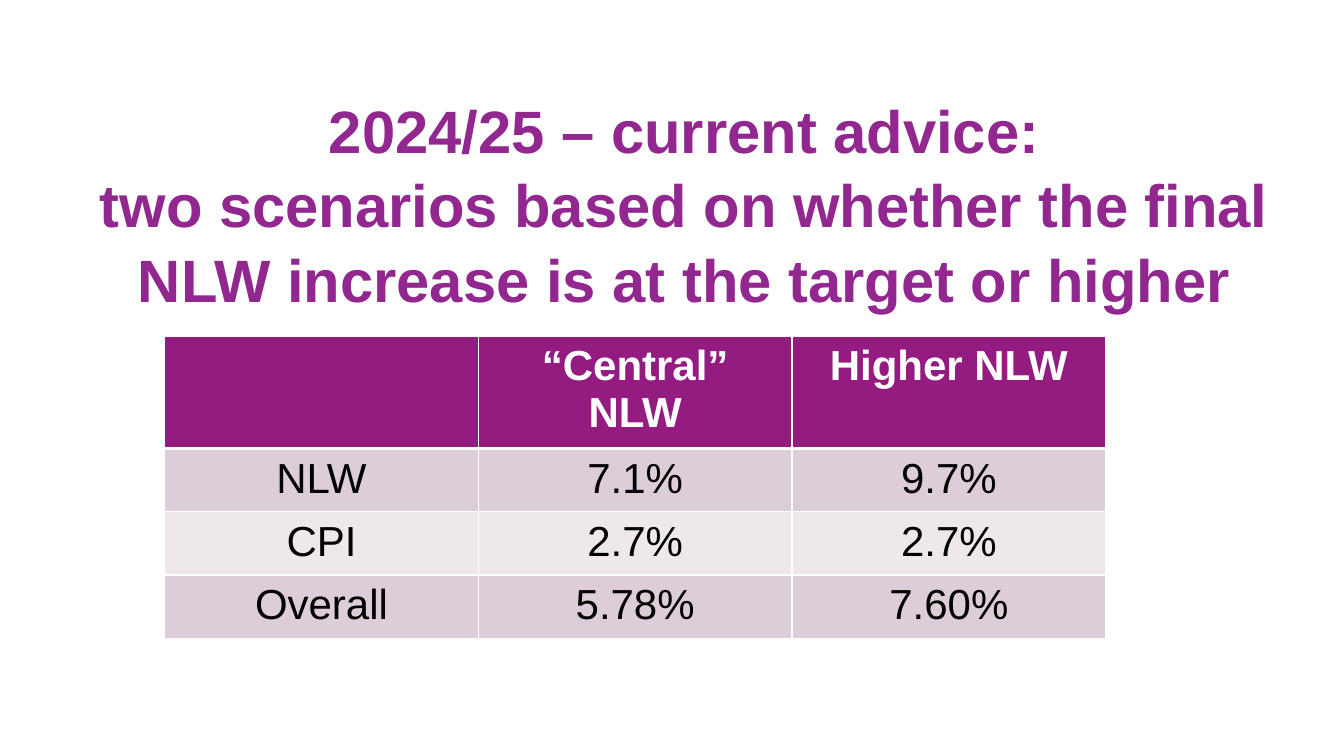
from dataclasses import dataclass

from lxml.etree import SubElement
from pptx import Presentation
from pptx.dml.color import RGBColor
from pptx.enum.text import MSO_ANCHOR, MSO_AUTO_SIZE, PP_ALIGN
from pptx.oxml.ns import qn
from pptx.util import Pt


@dataclass(frozen=True)
class Theme:
    """Hold the colours, font and type sizes."""
    font: str = "Arial"
    title_size: float = 42.7
    cell_size: float = 30
    title: str = "91278F"
    header: str = "941C81"
    bands: tuple = ("DCCDD8", "EEE8ED")
    text: str = "000000"
    white: str = "FFFFFF"


def write(p, text, *, font, size, color, bold=False, spacing=None):
    """Write centred, formatted text in a paragraph."""
    p.text = text
    p.alignment = PP_ALIGN.CENTER
    if spacing:
        p.line_spacing = spacing
    for r in p.runs:
        r.font.name = font
        r.font.size = Pt(size)
        r.font.bold = bold
        r.font.color.rgb = RGBColor.from_string(color)


class SlideBuilder:
    """Add styled elements to the current slide."""

    def __init__(self, s, theme):
        """Keep the slide and its theme."""
        self.s, self.theme = s, theme

    def title(self, text, left, top, width, height):
        """Place and fill the title placeholder."""
        sp = self.s.shapes.title
        sp.left, sp.top, sp.width, sp.height = map(Pt, (left, top, width, height))
        tf = sp.text_frame
        tf.word_wrap = True
        tf.auto_size = MSO_AUTO_SIZE.NONE
        tf.vertical_anchor = MSO_ANCHOR.TOP
        tf.margin_top = Pt(6.5)
        write(tf.paragraphs[0], text, font=self.theme.font, size=self.theme.title_size,
              color=self.theme.title, bold=True, spacing=1.04)

    def border(self, cell, side, width):
        """Draw one white border of a cell."""
        ln = SubElement(cell._tc.get_or_add_tcPr(), qn(f"a:ln{side}"), w=str(Pt(width)))
        fill = SubElement(ln, qn("a:solidFill"))
        SubElement(fill, qn("a:srgbClr"), val=self.theme.white)

    def cell(self, cell, text, row, rows):
        """Fill and format one table cell."""
        theme, header = self.theme, row == 0
        cell.margin_left = cell.margin_right = Pt(9.6)
        cell.margin_top = cell.margin_bottom = Pt(4.8)
        widths = {"L": 1, "R": 1, "T": 3 if row == 1 else 1, "B": 3 if header else 1}
        for side, width in widths.items():
            self.border(cell, side, width)
        cell.fill.solid()
        color = theme.header if header else theme.bands[(row - 1) % 2]
        cell.fill.fore_color.rgb = RGBColor.from_string(color)
        write(cell.text_frame.paragraphs[0], text, font=theme.font, size=theme.cell_size,
              color=theme.white if header else theme.text, bold=header)

    def table(self, data, left, top, col_width, heights):
        """Add a table with a header row and banded body rows."""
        rows, cols = len(data), len(data[0])
        table = self.s.shapes.add_table(rows, cols, Pt(left), Pt(top),
                                        Pt(col_width * cols), Pt(sum(heights))).table
        for col in table.columns:
            col.width = Pt(col_width)
        for i, (values, height) in enumerate(zip(data, heights)):
            table.rows[i].height = Pt(height)
            for j, text in enumerate(values):
                self.cell(table.cell(i, j), text, i, rows)


def main():
    """Build and save the slide."""
    prs = Presentation()
    prs.slide_width, prs.slide_height = Pt(960), Pt(540)
    builder = SlideBuilder(prs.slides.add_slide(prs.slide_layouts[5]), Theme())
    builder.title("2024/25 – current advice:\vtwo scenarios based on whether the final "
                  "NLW increase is at the target or higher", 57, 58.3, 864, 75.6)
    scenarios = [
        ("", "“Central” NLW", "Higher NLW"),
        ("NLW", "7.1%", "9.7%"),
        ("CPI", "2.7%", "2.7%"),
        ("Overall", "5.78%", "7.60%"),
    ]
    builder.table(scenarios, 117.6, 240, 224.1, [80.4, 45.2, 45.2, 45.2])
    prs.save("out.pptx")


if __name__ == "__main__":
    main()
